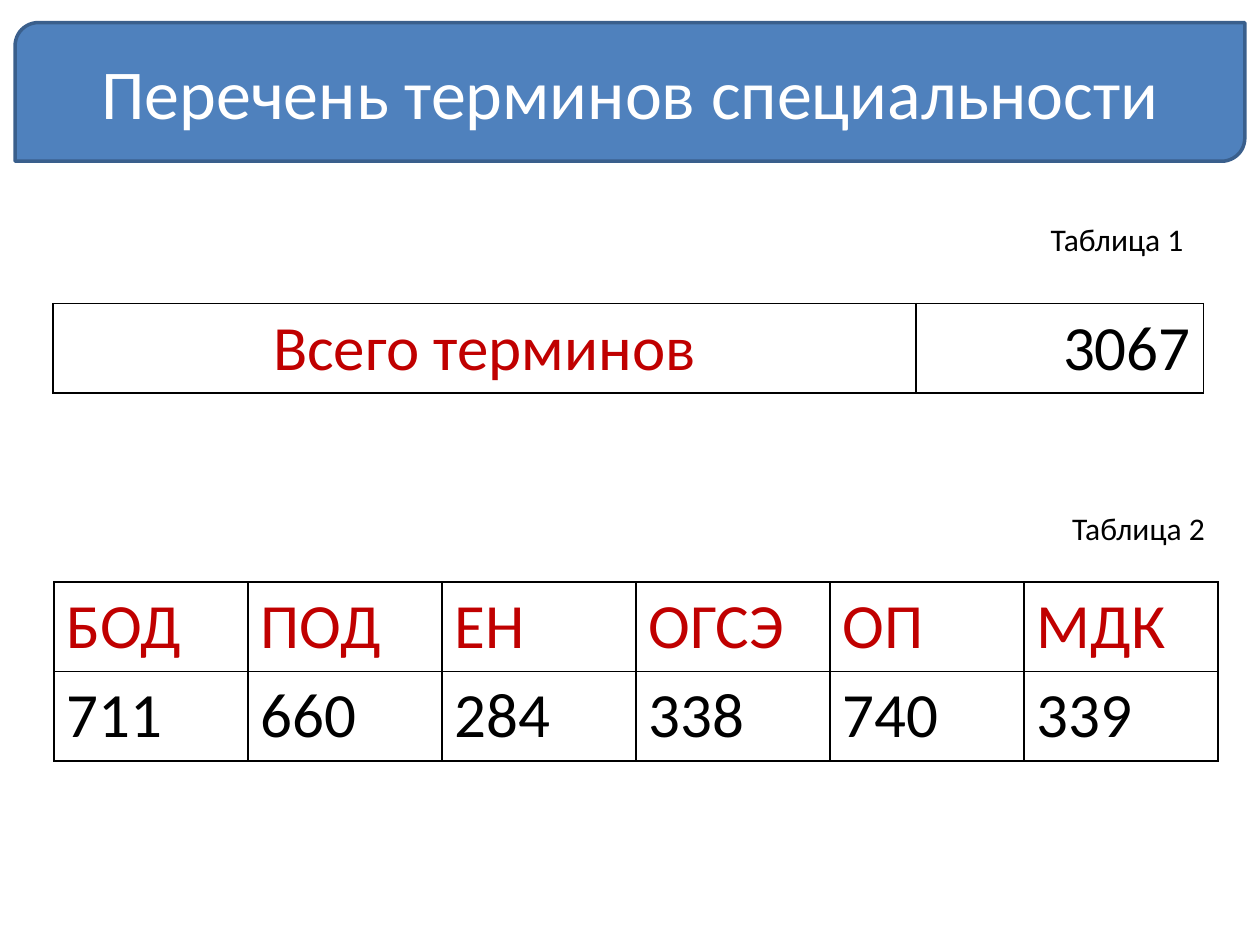
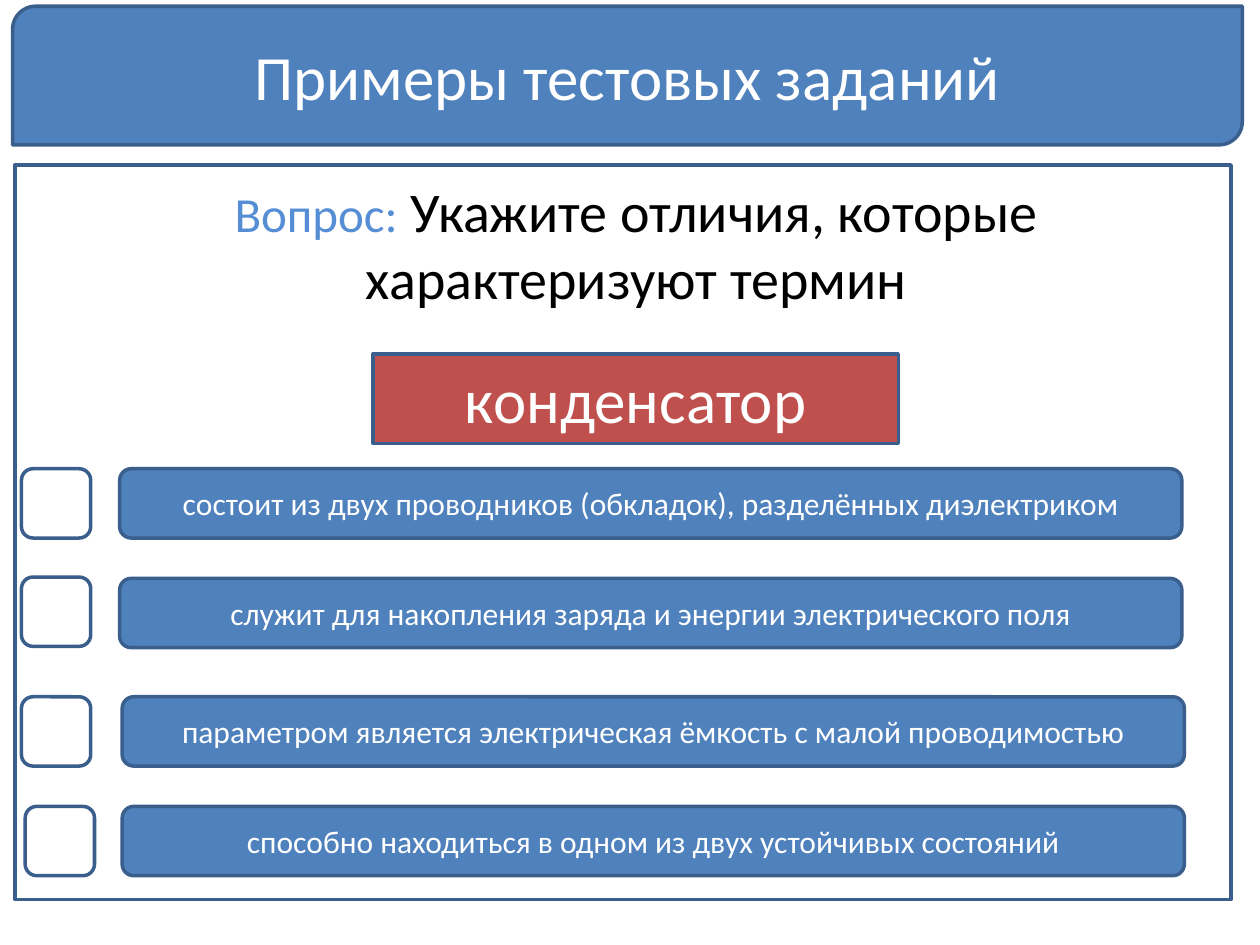
from dataclasses import dataclass
from typing import Optional

from lxml import etree
from pptx import Presentation
from pptx.dml.color import RGBColor
from pptx.enum.shapes import MSO_SHAPE
from pptx.enum.text import MSO_ANCHOR, MSO_AUTO_SIZE, PP_ALIGN
from pptx.oxml.ns import qn
from pptx.util import Inches, Pt

LEFT, CENTER, RIGHT = PP_ALIGN.LEFT, PP_ALIGN.CENTER, PP_ALIGN.RIGHT
MIDDLE = MSO_ANCHOR.MIDDLE
NO_AUTOFIT = MSO_AUTO_SIZE.NONE
RECTANGLE = MSO_SHAPE.RECTANGLE
ROUNDED = MSO_SHAPE.ROUNDED_RECTANGLE
BANNER = MSO_SHAPE.ROUND_2_DIAG_RECTANGLE
TITLE_ONLY_LAYOUT, BLANK_LAYOUT = 5, 6


@dataclass(frozen=True)
class Theme:
    font: str = "Calibri"
    blue: str = "4F81BD"
    outline: str = "3A5F8C"
    red: str = "C0504D"
    dark_red: str = "C00000"
    light_blue: str = "558ED5"
    white: str = "FFFFFF"
    black: str = "000000"
    banner_size: int = 40
    large_size: int = 36
    question_size: int = 32
    label_size: int = 28
    body_size: int = 18
    outline_width: int = 2
    border_width: int = 1


@dataclass(frozen=True)
class Box:
    left: float
    top: float
    width: float
    height: float

    def lengths(self) -> tuple:
        return tuple(Inches(value) for value in (self.left, self.top, self.width, self.height))


@dataclass(frozen=True)
class Answer:
    text: str
    top: float
    left: float
    checkbox_left: float
    checkbox_top: float


@dataclass(frozen=True)
class TableSpec:
    caption: str
    caption_box: Box
    box: Box
    columns: tuple
    rows: tuple
    colors: tuple
    alignments: tuple


THEME = Theme()
ROW_HEIGHT = 0.71
ANSWER_WIDTH, ANSWER_HEIGHT = 8.43, 0.55

TABLES = (
    TableSpec("Таблица 1", Box(6.1, 1.7, 3.39, 0.4), Box(0.42, 2.41, 9.13, ROW_HEIGHT),
              (6.85, 2.28), (("Всего терминов", "3067"),),
              ((THEME.dark_red, THEME.black),), (CENTER, RIGHT)),
    TableSpec("Таблица 2", Box(6.27, 3.99, 3.39, 0.4), Box(0.43, 4.62, 9.23, 2 * ROW_HEIGHT),
              (1.54,) * 6,
              (("БОД", "ПОД", "ЕН", "ОГСЭ", "ОП", "МДК"),
               ("711", "660", "284", "338", "740", "339")),
              ((THEME.dark_red,) * 6, (THEME.black,) * 6), (LEFT,) * 6),
)

ANSWERS = (
    Answer("состоит из двух проводников (обкладок), разделённых диэлектриком",
           3.72, 0.95, 0.17, 3.72),
    Answer("служит для накопления заряда и энергии электрического поля",
           4.59, 0.95, 0.17, 4.58),
    Answer("параметром является электрическая ёмкость с малой проводимостью",
           5.53, 0.97, 0.17, 5.53),
    Answer("способно находиться в одном из двух устойчивых состояний",
           6.4, 0.97, 0.2, 6.4),
)


def add_text(text_frame, text: str, *, size: int, color: str, alignment=CENTER) -> None:
    paragraph = text_frame.paragraphs[0]
    paragraph.alignment = alignment
    run = paragraph.add_run()
    run.text = text
    run.font.name = THEME.font
    run.font.size = Pt(size)
    run.font.color.rgb = RGBColor.from_string(color)


def add_box(slide, kind, box: Box, fill: Optional[str] = None, text: str = "",
            size: int = THEME.body_size) -> None:
    shape = slide.shapes.add_shape(kind, *box.lengths())
    shape.shadow.inherit = False
    if fill:
        shape.fill.solid()
        shape.fill.fore_color.rgb = RGBColor.from_string(fill)
    else:
        shape.fill.background()
    shape.line.color.rgb = RGBColor.from_string(THEME.outline)
    shape.line.width = Pt(THEME.outline_width)
    if text:
        shape.text_frame.word_wrap = True
        shape.text_frame.vertical_anchor = MIDDLE
        add_text(shape.text_frame, text, size=size, color=THEME.white)


def add_banner(slide, text: str, left: float, top: float, size: int) -> None:
    add_box(slide, BANNER, Box(left, top, 9.76, 1.1), THEME.blue, text, size)


def add_caption(slide, text: str, box: Box) -> None:
    text_frame = slide.shapes.add_textbox(*box.lengths()).text_frame
    text_frame.word_wrap = True
    add_text(text_frame, text, size=THEME.body_size, color=THEME.black, alignment=RIGHT)


def set_borders(cell) -> None:
    properties = cell._tc.get_or_add_tcPr()
    for side in ("a:lnL", "a:lnR", "a:lnT", "a:lnB"):
        line = etree.SubElement(properties, qn(side), w=str(Pt(THEME.border_width)))
        fill = etree.SubElement(line, qn("a:solidFill"))
        etree.SubElement(fill, qn("a:srgbClr"), val=THEME.black)


def add_table(slide, table_spec: TableSpec) -> None:
    add_caption(slide, table_spec.caption, table_spec.caption_box)
    table = slide.shapes.add_table(len(table_spec.rows), len(table_spec.columns),
                                   *table_spec.box.lengths()).table
    table.first_row = False
    table.horz_banding = False
    for column, width in zip(table.columns, table_spec.columns):
        column.width = Inches(width)
    for row_index, (values, colors) in enumerate(zip(table_spec.rows, table_spec.colors)):
        table.rows[row_index].height = Inches(ROW_HEIGHT)
        cells = zip(values, colors, table_spec.alignments)
        for column_index, (value, color, alignment) in enumerate(cells):
            cell = table.cell(row_index, column_index)
            set_borders(cell)
            cell.fill.background()
            add_text(cell.text_frame, value, size=THEME.large_size, color=color,
                     alignment=alignment)


def add_question(slide) -> None:
    title = slide.shapes.title
    title.left, title.top, title.width, title.height = Box(0.55, 1.31, 9, 1.25).lengths()
    text_frame = title.text_frame
    text_frame.auto_size = NO_AUTOFIT
    text_frame.word_wrap = True
    text_frame.vertical_anchor = MIDDLE
    add_text(text_frame, "Вопрос:", size=THEME.label_size, color=THEME.light_blue)
    add_text(text_frame, " Укажите отличия, которые характеризуют термин",
             size=THEME.question_size, color=THEME.black)


def add_answer(slide, answer: Answer) -> None:
    add_box(slide, ROUNDED, Box(answer.left, answer.top, ANSWER_WIDTH, ANSWER_HEIGHT),
            THEME.blue, answer.text)
    add_box(slide, ROUNDED, Box(answer.checkbox_left, answer.checkbox_top,
                                ANSWER_HEIGHT, ANSWER_HEIGHT))


def build_terms_slide(presentation) -> None:
    slide = presentation.slides.add_slide(presentation.slide_layouts[BLANK_LAYOUT])
    for table_spec in TABLES:
        add_table(slide, table_spec)
    add_banner(slide, "Перечень терминов специальности", 0.12, 0.18, THEME.banner_size)


def build_test_slide(presentation) -> None:
    slide = presentation.slides.add_slide(presentation.slide_layouts[TITLE_ONLY_LAYOUT])
    add_box(slide, RECTANGLE, Box(0.12, 1.31, 9.65, 5.83))
    add_banner(slide, "Примеры тестовых заданий", 0.1, 0.05, THEME.large_size)
    add_question(slide)
    add_box(slide, RECTANGLE, Box(2.96, 2.81, 4.17, 0.71), THEME.red, "конденсатор",
            THEME.large_size)
    for answer in ANSWERS:
        add_answer(slide, answer)


def main() -> None:
    presentation = Presentation()
    presentation.slide_width = Inches(10)
    presentation.slide_height = Inches(7.5)
    build_terms_slide(presentation)
    build_test_slide(presentation)
    presentation.save("out.pptx")


if __name__ == "__main__":
    main()
